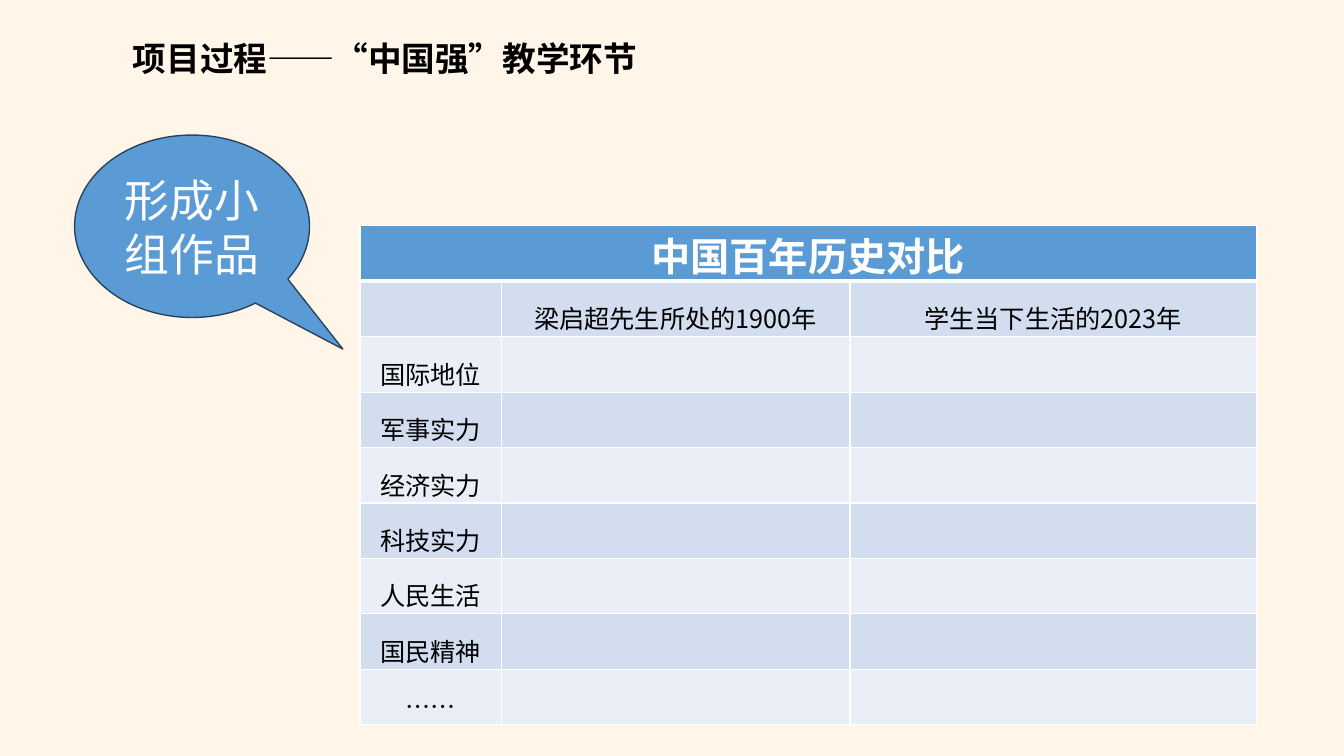
from dataclasses import dataclass

from lxml import etree
from pptx import Presentation
from pptx.dml.color import RGBColor
from pptx.enum import shapes, text
from pptx.oxml import ns
from pptx.util import Inches, Pt


@dataclass(frozen=True)
class Theme:
    font: str = "Noto Sans CJK SC"
    background: str = "FFF5E9"
    accent: str = "5B9BD5"
    outline: str = "28445D"
    dark_band: str = "D2DEEF"
    light_band: str = "EAEFF7"
    black: str = "000000"
    white: str = "FFFFFF"
    title_size: int = 24
    callout_size: int = 32
    header_size: int = 28
    body_size: int = 18


@dataclass(frozen=True)
class Box:
    left: float
    top: float
    width: float
    height: float

    def lengths(self) -> tuple:
        return tuple(map(Inches, (self.left, self.top, self.width, self.height)))


@dataclass(frozen=True)
class TextStyle:
    size: int
    color: str
    bold: bool = False
    align: text.PP_ALIGN = text.PP_ALIGN.CENTER
    line_spacing: float = 1.0


THEME = Theme()
TITLE_STYLE = TextStyle(THEME.title_size, THEME.black, True, text.PP_ALIGN.JUSTIFY)
CALLOUT_STYLE = TextStyle(THEME.callout_size, THEME.white)
HEADER_STYLE = TextStyle(THEME.header_size, THEME.white, True)
BODY_STYLE = TextStyle(THEME.body_size, THEME.black, line_spacing=1.5)

TITLE_BOX = Box(1.22, 0.33, 5.3, 0.5)
CALLOUT_BOX = Box(0.74, 1.34, 2.33, 1.81)
CALLOUT_TIP = (0.642, 0.673)
COLUMN_WIDTHS = (1.4, 3.46, 4.03)
ROW_HEIGHT = 0.55
TABLE_ROWS = (
    ("中国百年历史对比", "", ""),
    ("", "梁启超先生所处的1900年", "学生当下生活的2023年"),
    *((topic, "", "") for topic in (
        "国际地位", "军事实力", "经济实力", "科技实力",
        "人民生活", "国民精神", "……",
    )),
)
TABLE_BOX = Box(3.57, 2.24, sum(COLUMN_WIDTHS), ROW_HEIGHT * len(TABLE_ROWS))


def write_text(frame, content: str, style: TextStyle) -> None:
    paragraph = frame.paragraphs[0]
    paragraph.text = content
    paragraph.alignment = style.align
    paragraph.line_spacing = style.line_spacing
    font = paragraph.font
    font.name = THEME.font
    font.size = Pt(style.size)
    font.bold = style.bold
    font.color.rgb = RGBColor.from_string(style.color)
    for run in paragraph.runs:
        properties = run.font._element if hasattr(run.font, "_element") else run._r.get_or_add_rPr()
        etree.SubElement(properties, ns.qn("a:ea"), typeface=THEME.font)


def paint(fill, color: str) -> None:
    fill.solid()
    fill.fore_color.rgb = RGBColor.from_string(color)


def add_borders(cell, bottom_width: float) -> None:
    properties = cell._tc.get_or_add_tcPr()
    widths = {"lnL": 1, "lnR": 1, "lnT": 1, "lnB": bottom_width}
    for position, (side, width) in enumerate(widths.items()):
        line = etree.Element(ns.qn(f"a:{side}"), w=str(Pt(width)))
        fill = etree.SubElement(line, ns.qn("a:solidFill"))
        etree.SubElement(fill, ns.qn("a:srgbClr"), val=THEME.white)
        properties.insert(position, line)


def add_title(slide) -> None:
    frame = slide.shapes.add_textbox(*TITLE_BOX.lengths()).text_frame
    frame.word_wrap = False
    frame.auto_size = text.MSO_AUTO_SIZE.SHAPE_TO_FIT_TEXT
    write_text(frame, "项目过程——“中国强”教学环节", TITLE_STYLE)


def add_comparison_table(slide) -> None:
    table = slide.shapes.add_table(
        len(TABLE_ROWS), len(COLUMN_WIDTHS), *TABLE_BOX.lengths()
    ).table
    for column, width in zip(table.columns, COLUMN_WIDTHS):
        column.width = Inches(width)
    for row_index, (row, contents) in enumerate(zip(table.rows, TABLE_ROWS)):
        row.height = Inches(ROW_HEIGHT)
        is_header = row_index == 0
        band = THEME.dark_band if row_index % 2 else THEME.light_band
        for cell, content in zip(row.cells, contents):
            cell.margin_top = cell.margin_bottom = 0
            paint(cell.fill, THEME.accent if is_header else band)
            add_borders(cell, 3 if is_header else 1)
            if content:
                write_text(cell.text_frame, content, HEADER_STYLE if is_header else BODY_STYLE)
    table.cell(0, 0).merge(table.cell(0, len(COLUMN_WIDTHS) - 1))


def add_callout(slide) -> None:
    shape = slide.shapes.add_shape(
        shapes.MSO_SHAPE.OVAL_CALLOUT, *CALLOUT_BOX.lengths()
    )
    for index, value in enumerate(CALLOUT_TIP):
        shape.adjustments[index] = value
    shape.shadow.inherit = False
    paint(shape.fill, THEME.accent)
    paint(shape.line.fill, THEME.outline)
    shape.line.width = Pt(1)
    shape.text_frame.word_wrap = True
    shape.text_frame.vertical_anchor = text.MSO_ANCHOR.MIDDLE
    write_text(shape.text_frame, "形成小组作品", CALLOUT_STYLE)


def main() -> None:
    presentation = Presentation()
    presentation.slide_width = Inches(13.33)
    presentation.slide_height = Inches(7.5)
    slide = presentation.slides.add_slide(presentation.slide_layouts[6])
    paint(slide.background.fill, THEME.background)
    add_title(slide)
    add_comparison_table(slide)
    add_callout(slide)
    presentation.save("out.pptx")


if __name__ == "__main__":
    main()
